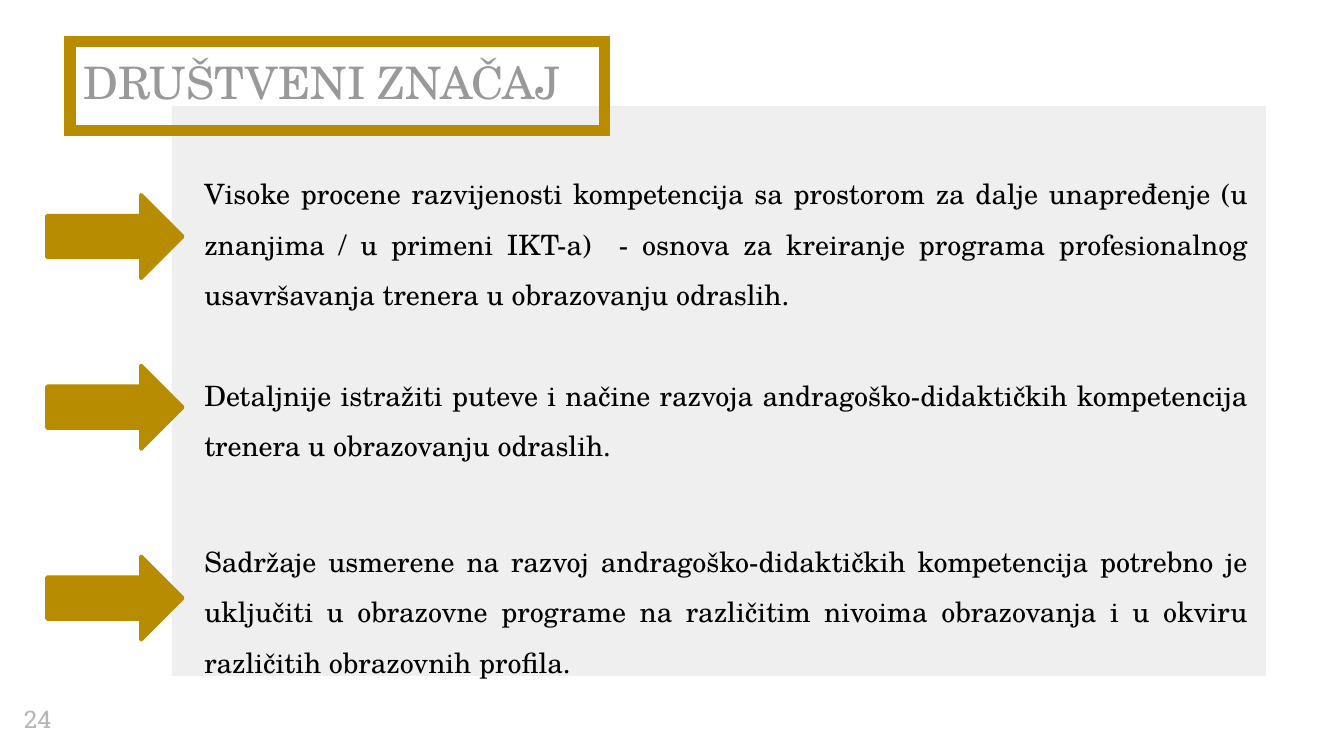
from pptx import Presentation
from pptx.dml.color import RGBColor
from pptx.enum import shapes as sh, text as tx
from pptx.oxml import ns
from pptx.util import Inches, Pt
from lxml import etree

GOLD = RGBColor(0xB8, 0x8C, 0x00)
PALE = RGBColor(0xEF, 0xEF, 0xEF)
GRAY = RGBColor(0x99, 0x99, 0x99)
SILVER = RGBColor(0xB7, 0xB7, 0xB7)
BLACK = RGBColor(0, 0, 0)
SERIF, SLAB = "TeX Gyre Schola", "Roboto Slab"

# Content: each point has its text, the space after it (pt) and its arrow's top
TITLE = "DRUŠTVENI ZNAČAJ"
NUMBER = "24"
POINTS = [
    ("Visoke procene razvijenosti kompetencija sa prostorom za dalje "
     "unapređenje (u znanjima / u primeni IKT-a)  - osnova za kreiranje "
     "programa profesionalnog usavršavanja trenera u obrazovanju odraslih.",
     27, 1.45),
    ("Detaljnije istražiti puteve i načine razvoja andragoško-didaktičkih "
     "kompetencija trenera u obrazovanju odraslih.", 35, 2.72),
    ("Sadržaje usmerene na razvoj andragoško-didaktičkih kompetencija "
     "potrebno je uključiti u obrazovne programe na različitim nivoima "
     "obrazovanja i u okviru različitih obrazovnih profila.", 0, 4.14),
]

# Formats
FRAME = dict(word_wrap=True, auto_size=tx.MSO_AUTO_SIZE.NONE,
             margin_left=Inches(0.1), margin_right=Inches(0.1),
             vertical_anchor=tx.MSO_ANCHOR.TOP)
HEAD = dict(FRAME, margin_top=Inches(0.1), margin_bottom=Inches(0.1))
BODY = dict(FRAME, margin_top=Inches(0.05), margin_bottom=Inches(0.05))
LEFT = dict(alignment=tx.PP_ALIGN.LEFT)
JUST = dict(alignment=tx.PP_ALIGN.JUSTIFY, line_spacing=1.5,
            space_before=Pt(0))


def apply(item, form):
    for key, val in form.items():
        setattr(item, key, val)


def place(item, *box):
    for key, val in zip(("left", "top", "width", "height"), box):
        setattr(item, key, Inches(val))


def write(para, words, form, font, size, color):
    apply(para, form)
    run = para.add_run()
    run.text = words
    apply(run.font, dict(name=font, size=Pt(size)))
    run.font.color.rgb = color


def draw(kind, box, fill):
    shape = slide.shapes.add_shape(kind, *map(Inches, box))
    shape.shadow.inherit = False
    shape.fill.solid()
    shape.fill.fore_color.rgb = fill
    return shape


def outline(shape, width, join):
    shape.line.color.rgb = GOLD
    shape.line.width = Pt(width)
    etree.SubElement(shape.line._get_or_add_ln(), ns.qn(join))


# Widescreen slide, 16 to 9
deck = Presentation()
deck.slide_width = Inches(10)
deck.slide_height = Inches(10 * 9 / 16)
slide = deck.slides.add_slide(deck.slide_layouts[1])

# Panel, sent behind the text
panel = draw(sh.MSO_SHAPE.RECTANGLE, (1.28, 0.79, 8.14, 4.24), PALE)
panel.line.fill.background()
slide.shapes._spTree.insert(2, panel._element)

# Framed title
title = slide.shapes.title
place(title, 0.52, 0.31, 3.98, 0.66)
outline(title, 6, "a:miter")
apply(title.text_frame, HEAD)
write(title.text_frame.paragraphs[0], TITLE, LEFT, SERIF, 24, GRAY)

# Slide number
num = slide.shapes.add_textbox(*map(Inches, (0.08, 5.14, 0.6, 0.43)))
apply(num.text_frame, HEAD)
write(num.text_frame.paragraphs[0], NUMBER, LEFT, SLAB, 13, SILVER)

# Points, each with its arrow
body = slide.placeholders[1]
place(body, 1.42, 1.14, 7.97, 3.95)
frame = body.text_frame
apply(frame, BODY)
for i, (words, gap, top) in enumerate(POINTS):
    para = frame.add_paragraph() if i else frame.paragraphs[0]
    write(para, words, dict(JUST, space_after=Pt(gap)), SERIF, 15, BLACK)
    props = para._p.get_or_add_pPr()
    props.set("marL", "0")
    props.set("indent", "0")
    etree.SubElement(props, ns.qn("a:buNone"))

    arrow = draw(sh.MSO_SHAPE.RIGHT_ARROW, (0.35, top, 1.01, 0.62), GOLD)
    outline(arrow, 2, "a:round")

deck.save("out.pptx")
